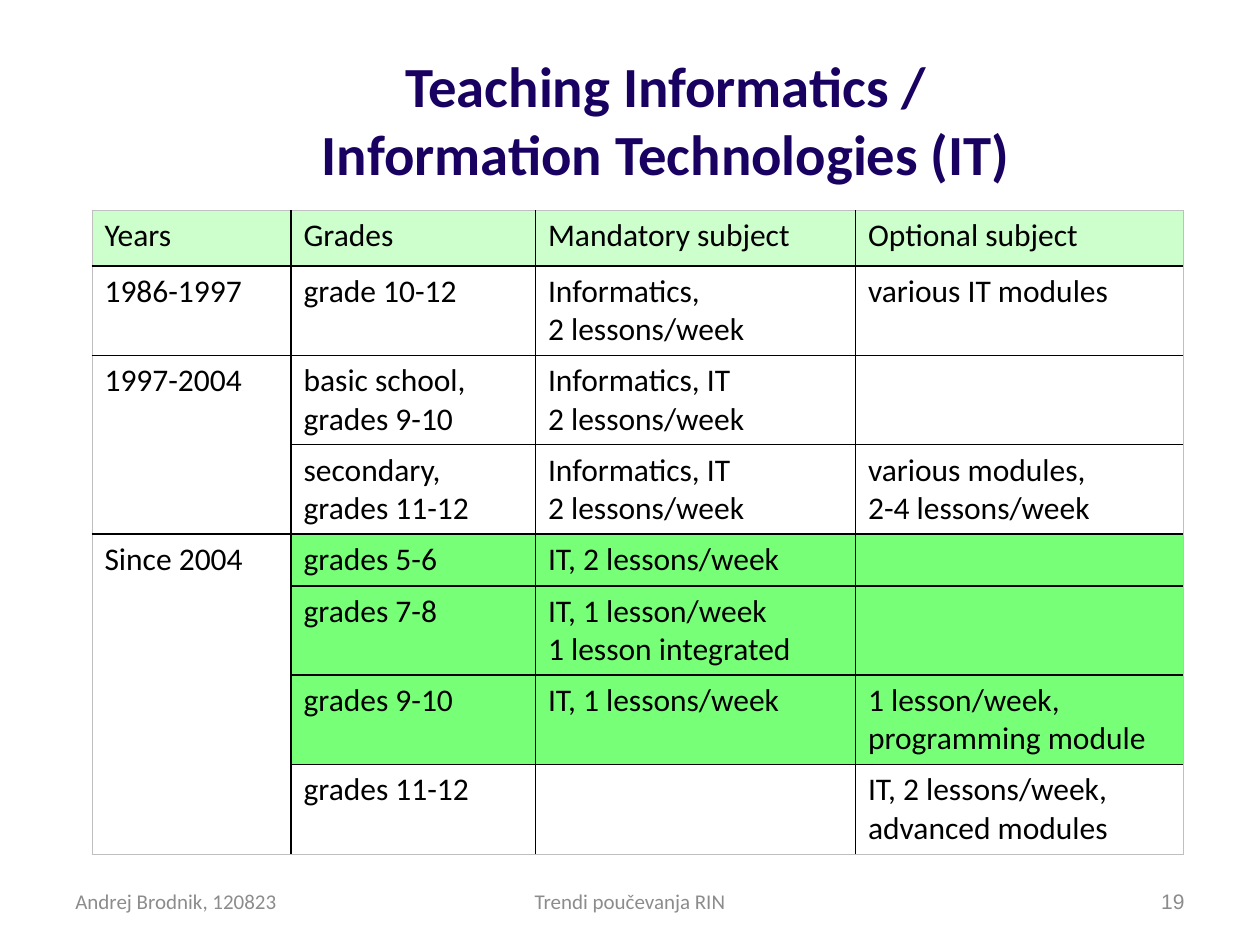
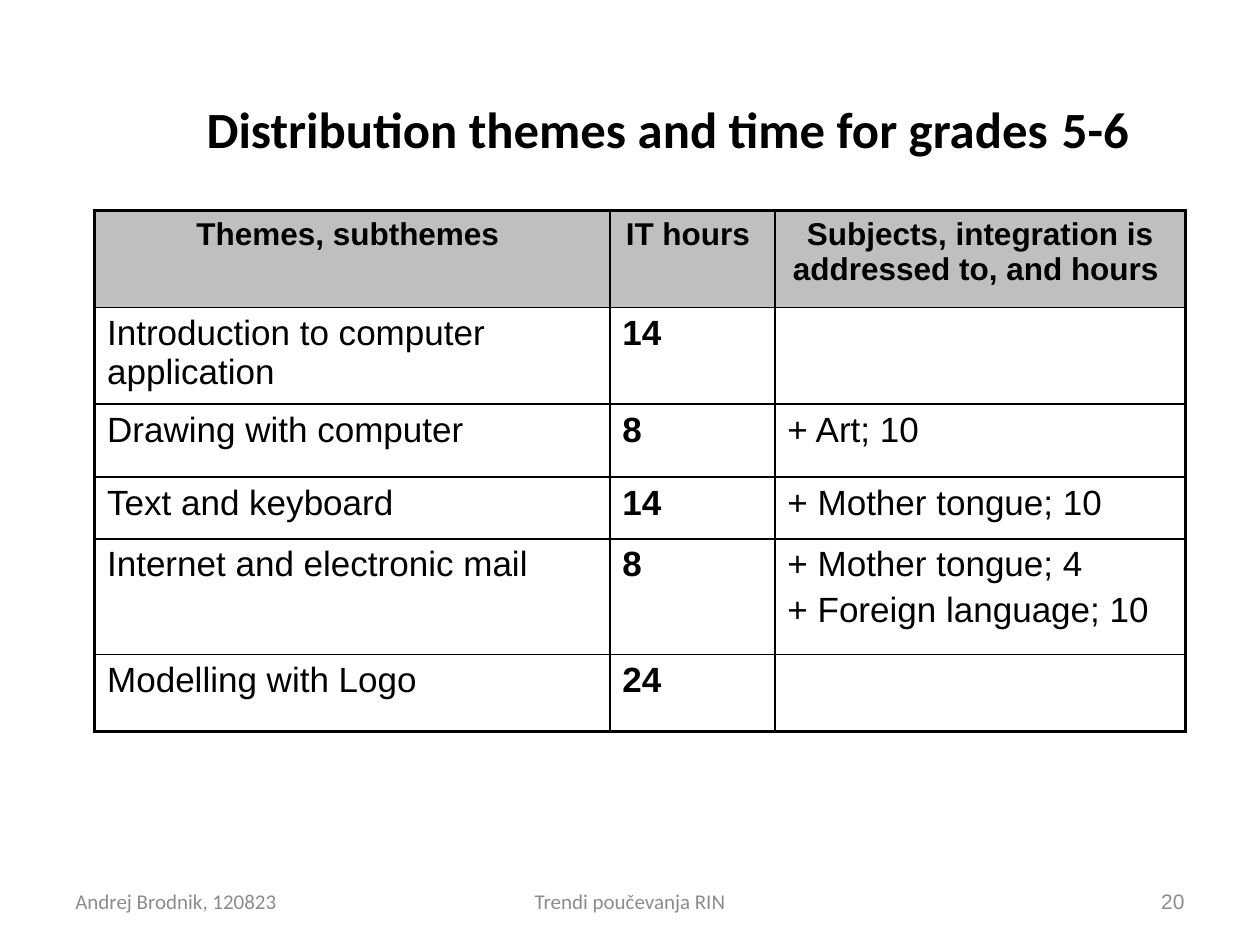
from collections import namedtuple

from lxml.etree import SubElement
from pptx import Presentation
from pptx.dml.color import RGBColor
from pptx.enum.text import MSO_ANCHOR, PP_ALIGN
from pptx.oxml.ns import qn
from pptx.util import Inches, Pt

Box = namedtuple("Box", "left top width height")
Edge = namedtuple("Edge", "color width")

BLACK = RGBColor(0x00, 0x00, 0x00)
WHITE = RGBColor(0xFF, 0xFF, 0xFF)
NAVY = RGBColor(0x18, 0x01, 0x61)
FOOTER_GRAY = RGBColor(0x8C, 0x8C, 0x8C)
HEADER_GRAY = RGBColor(0xBF, 0xBF, 0xBF)
PALE_GREEN = RGBColor(0xCC, 0xFF, 0xCC)
BRIGHT_GREEN = RGBColor(0x78, 0xFF, 0x78)

INNER_EDGE = Edge(BLACK, 1)
FAINT_EDGE = Edge(HEADER_GRAY, 0.5)
HEAVY_EDGE = Edge(BLACK, 2.25)

FOOTER_BAND = Box(0.5, 6.95, 9, 0.4)
FOOTER_TEXTS = ("Andrej Brodnik, 120823", "Trendi poučevanja RIN")

TEACHING_COLUMNS = (1.58, 1.94, 2.54, 2.6)
TEACHING_ROWS = (0.44, 0.71, 0.71, 0.71, 0.41, 0.71, 0.71, 0.71)
TEACHING = (
    ("Years", "Grades", "Mandatory subject", "Optional subject"),
    ("1986-1997", "grade 10-12", "Informatics,\n2 lessons/week", "various IT modules"),
    ("1997-2004", "basic school, grades 9-10", "Informatics, IT\n2 lessons/week", ""),
    ("", "secondary,\ngrades 11-12", "Informatics, IT\n2 lessons/week",
     "various modules,\n2-4 lessons/week"),
    ("Since 2004", "grades 5-6", "IT, 2 lessons/week", ""),
    ("", "grades 7-8", "IT, 1 lesson/week\n1 lesson integrated", ""),
    ("", "grades 9-10", "IT, 1 lessons/week", "1 lesson/week,\nprogramming module"),
    ("", "grades 11-12", "", "IT, 2 lessons/week,\nadvanced modules"),
)
YEAR_SPANS = ((2, 3), (4, 7))
BASIC_SCHOOL_ROWS = range(4, 7)

THEME_COLUMNS = (4.09, 1.31, 3.26)
THEME_ROWS = (0.77, 0.73, 0.58, 0.49, 0.92, 0.61)
THEMES = (
    ("Themes, subthemes ", "IT hours ", "Subjects, integration is addressed to, and hours "),
    ("Introduction to computer application", "14", ""),
    ("Drawing with computer", "8", "+ Art; 10"),
    ("Text and keyboard", "14", "+ Mother tongue; 10"),
    ("Internet and electronic mail", "8", "+ Mother tongue; 4\n+ Foreign language; 10"),
    ("Modelling with Logo", "24", ""),
)


def style(para, size, font="Calibri", color=BLACK, bold=False, align=PP_ALIGN.LEFT):
    para.alignment = align
    para.font.size = Pt(size)
    para.font.name = font
    para.font.bold = bold
    para.font.color.rgb = color


def add_text(page, box, text, size, **look):
    frame = page.shapes.add_textbox(*map(Inches, box)).text_frame
    frame.word_wrap = True
    frame.vertical_anchor = MSO_ANCHOR.MIDDLE
    para = frame.paragraphs[0]
    para.text = text
    style(para, size, **look)
    return para


def add_title(page, box, text, size, color):
    return add_text(page, box, text, size, color=color, bold=True, align=PP_ALIGN.CENTER)


def add_footer(page, band, number):
    author, topic = FOOTER_TEXTS
    parts = (
        (0, 0.26, author, "Calibri", PP_ALIGN.LEFT),
        (0.324, 0.352, topic, "Calibri", PP_ALIGN.CENTER),
        (0.74, 0.26, str(number), "Arial", PP_ALIGN.RIGHT),
    )
    for start, share, text, font, align in parts:
        box = Box(band.left + start * band.width, band.top, share * band.width, band.height)
        add_text(page, box, text, 12, font=font, color=FOOTER_GRAY, align=align)


def draw_edges(table, outer):
    last_row, last_column = len(table.rows) - 1, len(table.columns) - 1
    for r in range(last_row + 1):
        for c in range(last_column + 1):
            cell = table.cell(r, c)
            end = r + cell.span_height - 1 if cell.is_merge_origin else r
            sides = [("a:lnL", c == 0), ("a:lnR", c == last_column)]
            if not cell.is_spanned:
                sides += [("a:lnT", r == 0), ("a:lnB", end == last_row)]
            properties = cell._tc.get_or_add_tcPr()
            for position, (tag, is_outer) in enumerate(sides):
                edge = outer if is_outer else INNER_EDGE
                line = SubElement(properties, qn(tag), w=str(Pt(edge.width)))
                fill = SubElement(line, qn("a:solidFill"))
                SubElement(fill, qn("a:srgbClr"), val=str(edge.color))
                properties.insert(position, line)


def add_grid(page, left, top, columns, rows, content, fill_of, style_of, spacing=0):
    frame = page.shapes.add_table(
        len(rows), len(columns), Inches(left), Inches(top), Inches(sum(columns)), Inches(sum(rows)))
    table = frame.table
    table.first_row = table.horz_banding = False
    for column, width in zip(table.columns, columns):
        column.width = Inches(width)
    for row, height in zip(table.rows, rows):
        row.height = Inches(height)
    for r, texts in enumerate(content):
        for c, text in enumerate(texts):
            cell = table.cell(r, c)
            cell.fill.solid()
            cell.fill.fore_color.rgb = fill_of(r, c)
            cell.text = text
            for index, para in enumerate(cell.text_frame.paragraphs):
                style(para, **style_of(r, c))
                if index:
                    para.space_before = Pt(spacing)
    return table


def teaching_fill(row, column):
    if row == 0:
        return PALE_GREEN
    return BRIGHT_GREEN if row in BASIC_SCHOOL_ROWS and column else WHITE


def teaching_style(row, column):
    return {"size": 18}


def theme_fill(row, column):
    return WHITE if row else HEADER_GRAY


def theme_style(row, column):
    if row == 0:
        return {"size": 18, "font": "Arial", "bold": True, "align": PP_ALIGN.CENTER}
    return {"size": 20, "font": "Arial", "bold": column == 1}


def build_teaching_page(page):
    add_title(page, Box(1.05, 0.32, 8.47, 1.25),
              "Teaching Informatics /\vInformation Technologies (IT)", 32.4, NAVY)
    table = add_grid(page, 0.73, 1.67, TEACHING_COLUMNS, TEACHING_ROWS, TEACHING,
                     teaching_fill, teaching_style)
    for first, last in YEAR_SPANS:
        table.cell(first, 0).merge(table.cell(last, 0))
    draw_edges(table, FAINT_EDGE)


def build_themes_page(page):
    title = add_title(page, Box(0.93, 0.6, 8.74, 0.8),
                      "Distribution themes and time for grades", 29, BLACK)
    gap = title.add_run()
    gap.text = " "
    gap.font.size = Pt(32)
    gap.font.bold = False
    title.add_run().text = "5-6"
    table = add_grid(page, 0.75, 1.67, THEME_COLUMNS, THEME_ROWS, THEMES,
                     theme_fill, theme_style, spacing=4)
    draw_edges(table, HEAVY_EDGE)


def main():
    deck = Presentation()
    deck.slide_width, deck.slide_height = Inches(10), Inches(7.5)
    for number, build in enumerate((build_teaching_page, build_themes_page), start=19):
        page = deck.slides.add_slide(deck.slide_layouts[6])
        build(page)
        add_footer(page, FOOTER_BAND, number)
    deck.save("out.pptx")


if __name__ == "__main__":
    main()
